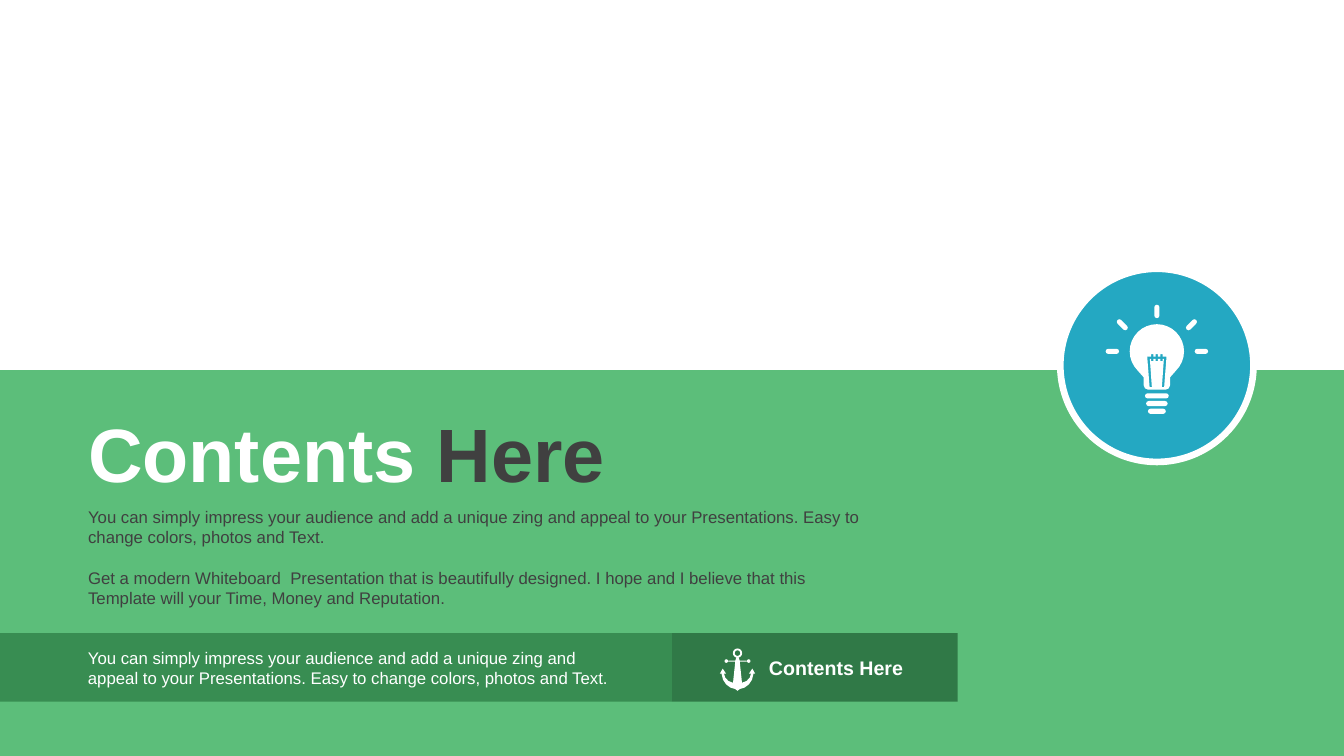
import math

import pptx
import pptx.util
import pptx.dml.color
import pptx.enum.shapes
import pptx.enum.text
from lxml import etree

Pt = pptx.util.Pt
RGBColor = pptx.dml.color.RGBColor
MSO_SHAPE = pptx.enum.shapes.MSO_SHAPE

WHITE = RGBColor(0xFF, 0xFF, 0xFF)
DARK = RGBColor(0x40, 0x40, 0x40)
GREEN = RGBColor(0x5C, 0xBE, 0x7A)
MID_GREEN = RGBColor(0x38, 0x8D, 0x52)
DEEP_GREEN = RGBColor(0x30, 0x79, 0x47)
BLUE = RGBColor(0x24, 0xA8, 0xC2)
A = "{http://schemas.openxmlformats.org/drawingml/2006/main}"
MARGIN = 55.7
IMPRESS = ("You can simply impress your audience and add a unique zing and appeal "
           "to your Presentations. Easy to change colors, photos and Text.")
MODERN = ("Get a modern Whiteboard  Presentation that is beautifully designed. "
          "I hope and I believe that this Template will your Time, Money and Reputation.")


def paint(sp, color):
    sp.shadow.inherit = False
    sp.fill.solid()
    sp.fill.fore_color.rgb = color
    sp.line.fill.background()
    return sp


def add_block(s, kind, x, y, w, h, color):
    return paint(s.shapes.add_shape(kind, Pt(x), Pt(y), Pt(w), Pt(h)), color)


def arc(cx, cy, radius, start, end, steps):
    angles = [math.radians(start + (end - start) * i / steps) for i in range(steps + 1)]
    return [(cx + radius * math.cos(a), cy + radius * math.sin(a)) for a in angles]


def capsule(cx, cy, length, thick, angle):
    reach = (length - thick) / 2
    dx, dy = reach * math.cos(math.radians(angle)), reach * math.sin(math.radians(angle))
    return (arc(cx + dx, cy + dy, thick / 2, angle - 90, angle + 90, 4)
            + arc(cx - dx, cy - dy, thick / 2, angle + 90, angle + 270, 4))


def mirrored(half):
    return half + [(-dx, dy) for dx, dy in reversed(half)]


def add_icon(s, cx, cy, contours):
    builder = None
    for contour in contours:
        points = [(Pt(cx + x), Pt(cy + y)) for x, y in contour]
        if builder is None:
            builder = s.shapes.build_freeform(*points[0])
        else:
            builder.move_to(*points[0])
        builder.add_line_segments(points[1:])
    paint(builder.convert_to_shape(), WHITE)


def place(sp, x, y, w, h):
    sp.left, sp.top, sp.width, sp.height = Pt(x), Pt(y), Pt(w), Pt(h)


def write(sp, paragraphs, size, spacing, bold=False):
    tf = sp.text_frame
    tf.word_wrap = True
    tf.auto_size = pptx.enum.text.MSO_AUTO_SIZE.NONE
    tf.vertical_anchor = pptx.enum.text.MSO_ANCHOR.TOP
    for i, runs in enumerate(paragraphs):
        p = tf.add_paragraph() if i else tf.paragraphs[0]
        p.alignment = pptx.enum.text.PP_ALIGN.LEFT
        p.line_spacing = Pt(spacing)
        p.space_before = Pt(spacing if i else 0)
        for text, color in runs:
            r = p.add_run()
            r.text = text
            r.font.name = "Arial"
            r.font.size = Pt(size)
            r.font.bold = bold
            r.font.color.rgb = color


def add_text(s, x, y, w, h, *text):
    sp = s.shapes.add_textbox(Pt(x), Pt(y), Pt(w), Pt(h))
    write(sp, *text)


def add_intro(s, x, y, w, h):
    title, body = s.placeholders[0], s.placeholders[1]
    for top, height, color in ((y, h, GREEN), (y - 7.2, 7.2, WHITE)):
        band = add_block(s, MSO_SHAPE.RECTANGLE, x, top, w, height, color)
        title.element.addprevious(band.element)
    place(title, x + MARGIN, y + 23, 468, 72.7)
    write(title, [[("Contents", WHITE), (" Here", DARK)]], 54, 64.8, True)
    place(body, x + MARGIN, y + 94.1, 577, 80)
    write(body, [[(IMPRESS, DARK)], [(MODERN, DARK)]], 12, 14.4)
    for p in body.text_frame.paragraphs:
        pPr = p._p.get_or_add_pPr()
        pPr.set("marL", "0")
        pPr.set("indent", "0")
        etree.SubElement(pPr, A + "buNone")


def add_anchor(s, cx, y):
    body = mirrored([(1, 6.7), (1.5, 8.6), (6.6, 8.6), (6.6, 9.4), (1.6, 9.4),
                     (3.2, 24.5), (6.5, 23.2), (8.8, 20.8), (9.6, 18), (8.2, 18),
                     (10.6, 14.4), (12.6, 18), (11.4, 18), (10.4, 22.2),
                     (8.2, 25.6), (5, 28), (1.8, 28.9), (0, 30.2)])
    ring = [arc(0, 3.3, radius, 0, 360, 16) for radius in (3.3, 2)]
    knobs = [arc(side * 8, 9, 1.3, 0, 360, 8) for side in (-1, 1)]
    add_icon(s, cx, y, [body, *ring, *knobs])


def add_footer(s, x, y, w, h):
    split = 480
    add_block(s, MSO_SHAPE.RECTANGLE, x + split, y, w - split, h, DEEP_GREEN)
    add_block(s, MSO_SHAPE.RECTANGLE, x, y, split, h, MID_GREEN)
    add_text(s, x + MARGIN, y + 6.6, 402.5, 36, [[(IMPRESS, WHITE)]], 12, 14.4)
    add_text(s, x + 542.2, y + 13, 141.8, 24.5, [[("Contents Here", WHITE)]], 14, 16.4, True)
    add_anchor(s, x + 526.8, y + 11)


def filament():
    ticks = (-3.3, 0, 3.3)
    above = [(t + dx, dy) for t in ticks
             for dx, dy in ((-0.8, -6.3), (-0.8, -8), (0.8, -8), (0.8, -6.3))]
    below = [(t + dx, dy) for t in reversed(ticks)
             for dx, dy in ((0.8, -4.6), (0.8, -3), (-0.8, -3), (-0.8, -4.6))]
    right = [(6.9, -6.3), (5.2, 15.5), (3.6, 15.5), (5, -4.6)]
    left = [(-dx, dy) for dx, dy in reversed(right)]
    return above + right + below + left


def add_bulb_badge(s, x, y, size):
    cx, cy = x + size / 2, y + size / 2
    badge = add_block(s, MSO_SHAPE.OVAL, x, y, size, size, BLUE)
    badge.line.color.rgb = WHITE
    badge.line.width = Pt(4.75)
    neck = mirrored([(9.4, 8.6), (9.4, 14.3), (8.5, 16.4), (6.5, 17.3)])
    glass = arc(0, -10, 19.4, 135, 405, 24) + neck
    rays = [(-31.8, -10, 0), (-24.7, -29, 45), (0, -38.5, 90), (24.7, -29, -45), (31.8, -10, 0)]
    bars = [capsule(dx, dy, 9.6, 3.7, angle) for dx, dy, angle in rays]
    bars += [capsule(0, 21.8 + 5.5 * i, w, 3.7, 0) for i, w in enumerate((17, 15.4, 12.8))]
    add_icon(s, cx, cy, [glass, filament(), *bars])


def main():
    prs = pptx.Presentation()
    prs.slide_width, prs.slide_height = Pt(960), Pt(540)
    s = prs.slides.add_slide(prs.slide_layouts[1])
    add_intro(s, 0, 264.3, 960, 275.7)
    add_footer(s, 0, 452.2, 684, 49)
    add_bulb_badge(s, 757.4, 192, 138)
    prs.save("out.pptx")


if __name__ == "__main__":
    main()
